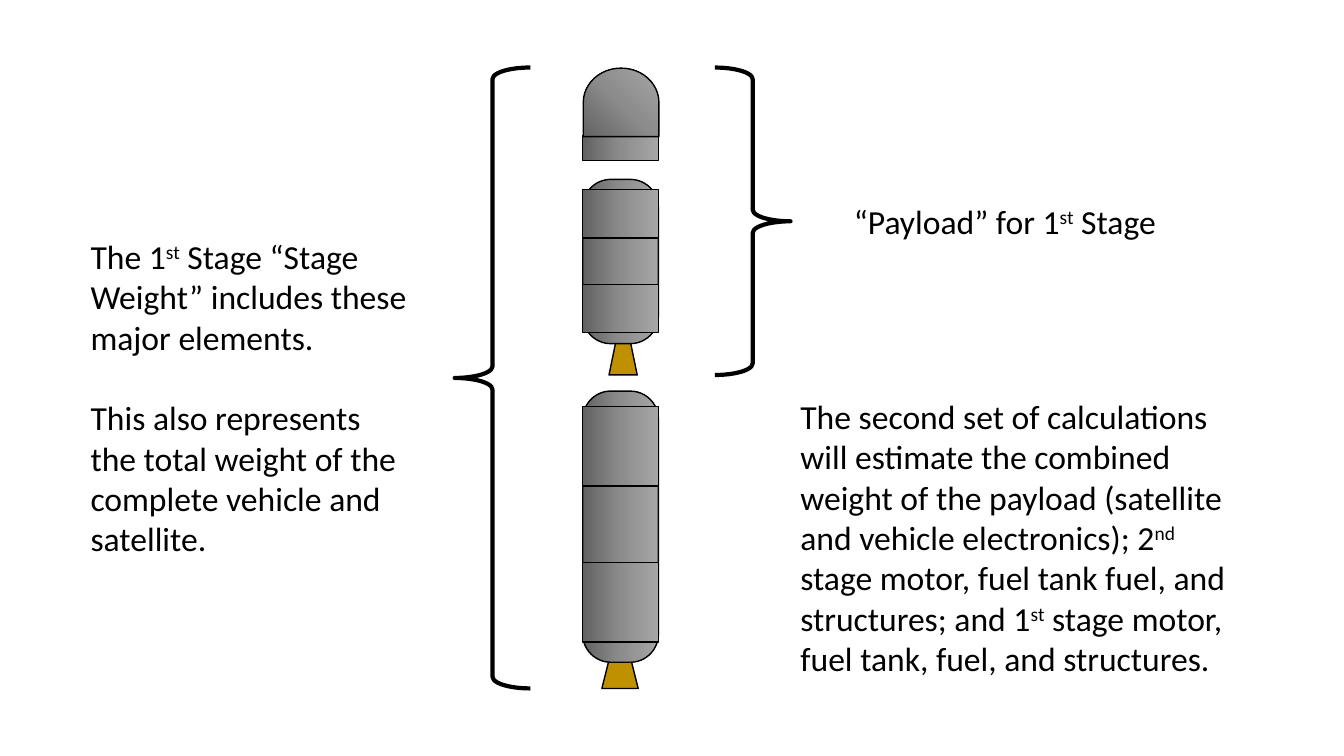
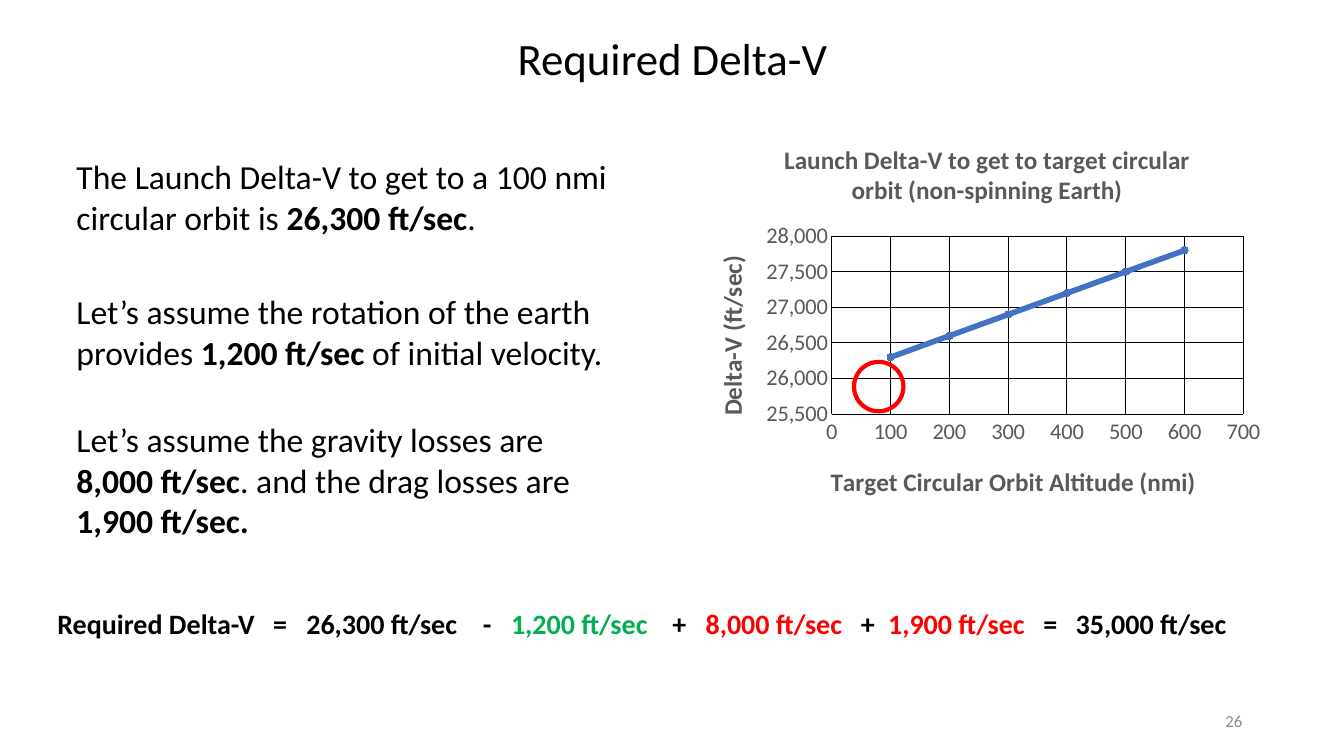
"""Build two slides on launch vehicle stage weight and required delta-V."""
from dataclasses import dataclass
from typing import Any, Optional, Sequence

import lxml.etree
import pptx
import pptx.chart.data
import pptx.dml.color
import pptx.enum.chart
import pptx.enum.shapes
import pptx.enum.text
import pptx.oxml.ns
import pptx.util

Inches = pptx.util.Inches
Pt = pptx.util.Pt
RGB = pptx.dml.color.RGBColor
SHAPE = pptx.enum.shapes.MSO_SHAPE
ALIGN = pptx.enum.text.PP_ALIGN
ANCHOR = pptx.enum.text.MSO_ANCHOR
qn = pptx.oxml.ns.qn


@dataclass(frozen=True)
class Theme:
    font: str = "Calibri"
    ink: str = "000000"
    muted: str = "8C8C8C"
    chart_text: str = "595959"
    series: str = "4472C4"
    gain: str = "00B050"
    loss: str = "FF0000"
    nozzle: str = "BF9000"
    metal: tuple[str, ...] = ("626262", "8C8C8C", "A6A6A6")
    title_size: float = 32
    body_size: float = 24
    equation_size: float = 20
    chart_title_size: float = 18
    chart_label_size: float = 16
    footer_size: float = 12


THEME = Theme()


@dataclass(frozen=True)
class Box:
    left: float
    top: float
    width: float
    height: float

    def lengths(self) -> tuple[int, int, int, int]:
        return (Inches(self.left), Inches(self.top), Inches(self.width), Inches(self.height))


@dataclass(frozen=True)
class Run:
    text: str
    bold: bool = False
    color: str = THEME.ink
    superscript: bool = False


@dataclass(frozen=True)
class Stage:
    tank: Box
    section_tops: tuple[float, ...]
    section_height: float
    nozzle: Box


@dataclass(frozen=True)
class Brace:
    box: Box
    rotation: float


@dataclass(frozen=True)
class Note:
    box: Box
    paragraphs: tuple[tuple[Run, ...], ...]


VEHICLE_LEFT, VEHICLE_WIDTH = 5.78, 0.75

STAGES = (
    Stage(Box(VEHICLE_LEFT, 1.78, VEHICLE_WIDTH, 1.63), (1.88, 2.82), 0.48,
          Box(6.04, 3.38, 0.28, 0.34)),
    Stage(Box(VEHICLE_LEFT, 3.88, VEHICLE_WIDTH, 2.69), (4.03, 5.58), 0.79,
          Box(5.97, 6.52, 0.36, 0.31)),
)

BRACES = (Brace(Box(4.51, 0.67, 0.75, 6.16), 0), Brace(Box(7.09, 0.67, 0.75, 3.05), 180))

ST = Run("st", superscript=True)

WEIGHT_NOTES = (
    Note(Box(8.37, 1.94, 3.4, 0.5), ((Run("“Payload” for 1"), ST, Run(" Stage")),)),
    Note(Box(0.8, 2.29, 3.4, 3.33), (
        (Run("The 1"), ST, Run(" Stage “Stage Weight” includes these major elements.")),
        (Run("This also represents the total weight of the complete vehicle and satellite."),),
    )),
    Note(Box(7.84, 3.88, 4.46, 2.93), ((
        Run("The second set of calculations will estimate the combined weight of the payload "
            "(satellite and vehicle electronics); 2"),
        Run("nd", superscript=True),
        Run(" stage motor, fuel tank fuel, and structures; and 1"),
        ST,
        Run(" stage motor, fuel tank, fuel, and structures."),
    ),)),
)

DELTA_V_NOTES = (
    Note(Box(0.66, 1.5, 5.51, 0.91), ((
        Run("The Launch Delta-V to get to a 100 nmi circular orbit is "),
        Run("26,300 ft/sec", bold=True), Run("."),
    ),)),
    Note(Box(0.66, 2.84, 5.51, 0.91), ((
        Run("Let’s assume the rotation of the earth provides "),
        Run("1,200 ft/sec ", bold=True), Run("of initial velocity."),
    ),)),
    Note(Box(0.66, 4.11, 5.51, 1.31), ((
        Run("Let’s assume the gravity losses are "), Run("8,000 ft/sec", bold=True),
        Run(". and the drag losses are "), Run("1,900 ft/sec.", bold=True),
    ),)),
)

EQUATION = (
    Run("Required Delta-V\t=\t26,300 ft/sec\t-\t", bold=True),
    Run("1,200 ft/sec", bold=True, color=THEME.gain),
    Run("\t+\t", bold=True),
    Run("8,000 ft/sec", bold=True, color=THEME.loss),
    Run("\t+\t", bold=True),
    Run("1,900 ft/sec", bold=True, color=THEME.loss),
    Run("\t=\t35,000 ft/sec", bold=True),
)
EQUATION_STOPS = (2.14, 2.47, 4.22, 4.5, 6.1, 6.43, 7.97, 8.24, 9.78, 10.1)

ALTITUDES = range(100, 700, 100)
VELOCITIES = range(26300, 27801, 300)


def style_font(font: Any, size: float, color: str, bold: bool = False) -> None:
    """Apply the theme font with a size, colour and weight."""
    font.name, font.size, font.bold = THEME.font, Pt(size), bold
    font.color.rgb = RGB.from_string(color)


def write_text(shape: Any, paragraphs: Sequence[Sequence[Run]], *,
               size: float = THEME.body_size, align: Any = ALIGN.LEFT,
               anchor: Any = ANCHOR.TOP, gap: float = 0,
               tab_stops: Sequence[float] = ()) -> None:
    """Fill a shape with formatted paragraphs."""
    frame = shape.text_frame
    frame.word_wrap = True
    frame.auto_size = pptx.enum.text.MSO_AUTO_SIZE.NONE
    frame.vertical_anchor = anchor
    for index, runs in enumerate(paragraphs):
        paragraph = frame.add_paragraph() if index else frame.paragraphs[0]
        paragraph.alignment = align
        paragraph.space_before = Pt(gap if index else 0)
        if tab_stops:
            stop_list = lxml.etree.SubElement(paragraph._p.get_or_add_pPr(), qn("a:tabLst"))
            for stop in tab_stops:
                lxml.etree.SubElement(stop_list, qn("a:tab"), pos=str(Inches(stop)), algn="l")
        for part in runs:
            run = paragraph.add_run()
            run.text = part.text
            style_font(run.font, size, part.color, part.bold)
            if part.superscript:
                run._r.get_or_add_rPr().set("baseline", "30000")


def add_text(slide: Any, box: Box, paragraphs: Sequence[Sequence[Run]], **formats: Any) -> None:
    """Add a text box in the given format."""
    write_text(slide.shapes.add_textbox(*box.lengths()), paragraphs, **formats)


def add_shape(shapes: Any, kind: Any, box: Box, *, fill: Optional[str] = None,
              line: str = THEME.ink, weight: float = 1, rotation: float = 0,
              adjustments: Sequence[float] = ()) -> Any:
    """Add an outlined shape, unfilled unless a colour is given."""
    shape = shapes.add_shape(kind, *box.lengths())
    shape.shadow.inherit = False
    shape.rotation = rotation
    for index, value in enumerate(adjustments):
        shape.adjustments[index] = value
    if fill:
        shape.fill.solid()
        shape.fill.fore_color.rgb = RGB.from_string(fill)
    else:
        shape.fill.background()
    shape.line.color.rgb = RGB.from_string(line)
    shape.line.width = Pt(weight)
    return shape


def add_metal(shapes: Any, kind: Any, box: Box, *, angle: float = 0, **formats: Any) -> None:
    """Add a shape with the metal gradient."""
    shape = add_shape(shapes, kind, box, **formats)
    shape.fill.gradient()
    shape.fill.gradient_angle = angle
    stop_list = next(shape.element.iter(qn("a:gsLst")))
    for stop in list(stop_list):
        stop_list.remove(stop)
    for index, color in enumerate(THEME.metal):
        stop = lxml.etree.SubElement(stop_list, qn("a:gs"), pos=str(50000 * index))
        lxml.etree.SubElement(stop, qn("a:srgbClr"), val=color)


def add_stage(slide: Any, stage: Stage) -> None:
    """Draw a rocket stage as one group."""
    shapes = slide.shapes.add_group_shape().shapes
    add_shape(shapes, SHAPE.TRAPEZOID, stage.nozzle, fill=THEME.nozzle)
    add_metal(shapes, SHAPE.ROUNDED_RECTANGLE, stage.tank, adjustments=(0.371,))
    for top in stage.section_tops:
        section = Box(VEHICLE_LEFT, top, VEHICLE_WIDTH, stage.section_height)
        add_metal(shapes, SHAPE.RECTANGLE, section)


def set_layout(parent: Any, index: int, **values: Any) -> None:
    """Place a chart part by fractions of the chart area."""
    layout = parent.find(qn("c:layout"))
    if layout is None:
        layout = parent.makeelement(qn("c:layout"))
        parent.insert(index, layout)
    manual = lxml.etree.SubElement(layout, qn("c:manualLayout"))
    for name, value in values.items():
        lxml.etree.SubElement(manual, qn(f"c:{name}"), val=str(value))


def set_chart_title(title: Any, text: str, left: float, top: float) -> None:
    """Write and place a chart or axis title."""
    paragraph = title.text_frame.paragraphs[0]
    run = paragraph.add_run()
    run.text = text
    style_font(run.font, THEME.chart_title_size, THEME.chart_text, bold=True)
    set_layout(title._element, 1, xMode="edge", yMode="edge", x=left, y=top)


def style_axis(axis: Any, low: float, high: float, step: float, number_format: str) -> None:
    """Set the scale, grid and labels of an axis."""
    axis.minimum_scale, axis.maximum_scale, axis.major_unit = low, high, step
    axis.major_tick_mark = axis.minor_tick_mark = pptx.enum.chart.XL_TICK_MARK.NONE
    axis.has_major_gridlines = True
    for line in (axis.format.line, axis.major_gridlines.format.line):
        line.color.rgb = RGB.from_string(THEME.ink)
        line.width = Pt(0.75)
    axis.tick_labels.number_format = number_format
    axis.tick_labels.number_format_is_linked = False
    style_font(axis.tick_labels.font, THEME.chart_label_size, THEME.chart_text)


def add_delta_v_chart(slide: Any, box: Box) -> None:
    """Plot launch delta-V against orbit altitude."""
    data = pptx.chart.data.XyChartData()
    points = data.add_series("Series 1")
    for altitude, velocity in zip(ALTITUDES, VELOCITIES):
        points.add_data_point(altitude, velocity)
    kind = pptx.enum.chart.XL_CHART_TYPE.XY_SCATTER_LINES
    chart = slide.shapes.add_chart(kind, *box.lengths(), data).chart
    style_font(chart.font, 10, THEME.ink)
    chart.has_legend = False
    chart.plots[0].vary_by_categories = False
    style_axis(chart.category_axis, 0, 700, 100, "General")
    style_axis(chart.value_axis, 25500, 28000, 500, "#,##0")
    set_chart_title(chart.chart_title,
                    "Launch Delta-V to get to target circular orbit (non-spinning Earth)", 0.15, 0.02)
    set_chart_title(chart.category_axis.axis_title,
                    "Target Circular Orbit Altitude (nmi)", 0.23, 0.87)
    set_chart_title(chart.value_axis.axis_title, "Delta-V (ft/sec)", 0.03, 0.32)
    set_layout(next(chart.element.iter(qn("c:plotArea"))), 0, layoutTarget="inner",
               xMode="edge", yMode="edge", x=0.24, y=0.28, w=0.71, h=0.47)
    series = chart.plots[0].series[0]
    series.smooth = False
    series.format.line.color.rgb = RGB.from_string(THEME.series)
    series.format.line.width = Pt(4)
    series.marker.style = pptx.enum.chart.XL_MARKER_STYLE.CIRCLE
    series.marker.size = 5
    series.marker.format.fill.solid()
    series.marker.format.fill.fore_color.rgb = RGB.from_string(THEME.series)
    series.marker.format.line.color.rgb = RGB.from_string(THEME.series)


def build_weight_slide(presentation: Any) -> None:
    """Build the slide on stage weight."""
    slide = presentation.slides.add_slide(presentation.slide_layouts[6])
    for stage in STAGES:
        add_stage(slide, stage)
    add_metal(slide.shapes, SHAPE.RECTANGLE, Box(VEHICLE_LEFT, 1.35, VEHICLE_WIDTH, 0.24))
    add_metal(slide.shapes, SHAPE.FLOWCHART_DELAY, Box(5.82, 0.64, 0.68, 0.75),
              angle=315, rotation=270)
    for brace in BRACES:
        add_shape(slide.shapes, SHAPE.LEFT_BRACE, brace.box, weight=3,
                  rotation=brace.rotation, adjustments=(0.153, 0.5))
    for note in WEIGHT_NOTES:
        add_text(slide, note.box, note.paragraphs, gap=29)


def build_delta_v_slide(presentation: Any) -> None:
    """Build the slide on required delta-V."""
    slide = presentation.slides.add_slide(presentation.slide_layouts[5])
    title = slide.shapes.title
    title.left, title.top, title.width, title.height = Box(3.81, 0.25, 5.72, 0.64).lengths()
    write_text(title, [[Run("Required Delta-V")]], size=THEME.title_size, align=ALIGN.CENTER)
    add_delta_v_chart(slide, Box(6.87, 1.29, 5.75, 3.76))
    add_text(slide, Box(0.47, 5.97, 12.15, 0.44), [EQUATION],
             size=THEME.equation_size, tab_stops=EQUATION_STOPS)
    for note in DELTA_V_NOTES:
        add_text(slide, note.box, note.paragraphs)
    add_shape(slide.shapes, SHAPE.OVAL, Box(8.47, 3.59, 0.49, 0.49), line=THEME.loss, weight=3)
    add_text(slide, Box(9.42, 6.95, 3, 0.4), [[Run("26", color=THEME.muted)]],
             size=THEME.footer_size, align=ALIGN.RIGHT, anchor=ANCHOR.MIDDLE)


def main() -> None:
    """Build and save the presentation."""
    presentation = pptx.Presentation()
    presentation.slide_width, presentation.slide_height = Inches(13.33), Inches(7.5)
    build_weight_slide(presentation)
    build_delta_v_slide(presentation)
    presentation.save("out.pptx")


if __name__ == "__main__":
    main()
